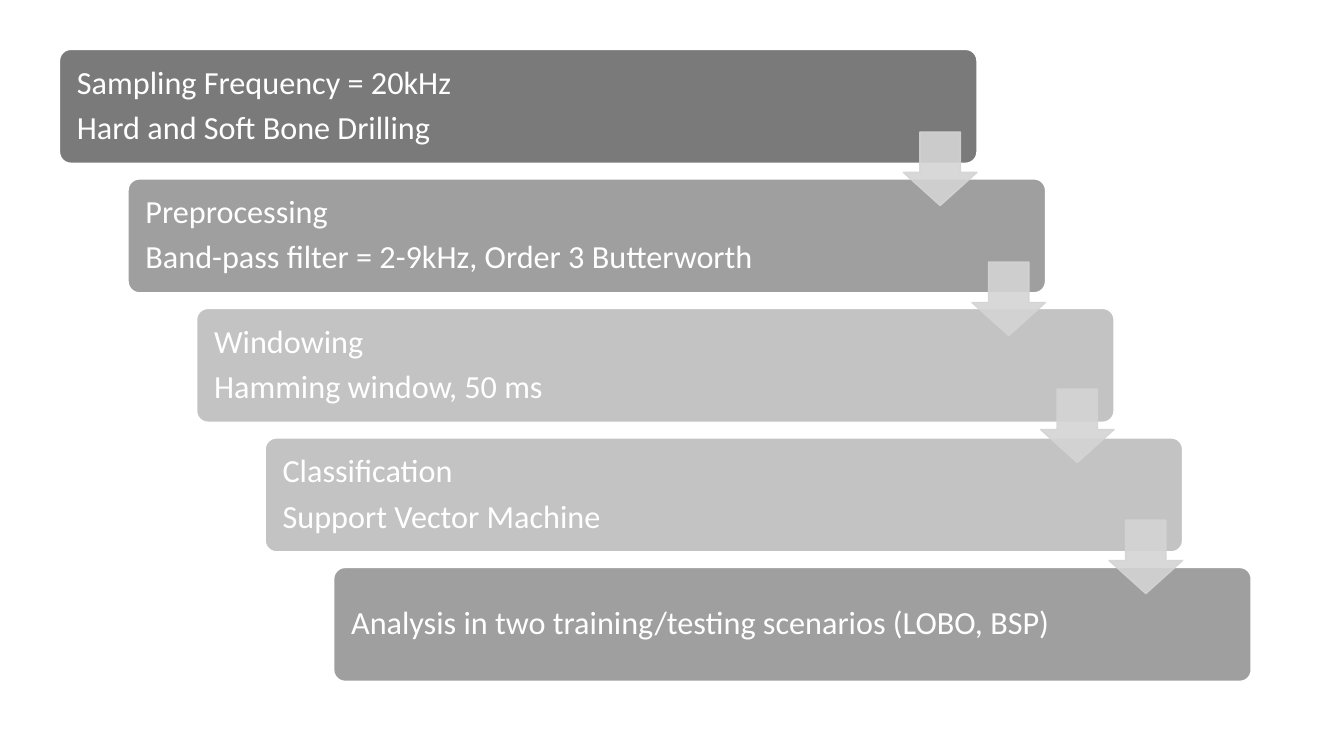
from dataclasses import dataclass
from typing import Optional

from pptx import Presentation
from pptx.dml.color import RGBColor
from pptx.enum.shapes import MSO_AUTO_SHAPE_TYPE as Shape
from pptx.enum.text import MSO_ANCHOR as Anchor, PP_ALIGN as Align
from pptx.oxml.ns import qn
from pptx.util import Inches, Pt
from lxml import etree

WHITE = RGBColor(0xFF, 0xFF, 0xFF)
DARK = RGBColor(0x7A, 0x7A, 0x7A)
MEDIUM = RGBColor(0x9F, 0x9F, 0x9F)
LIGHT = RGBColor(0xC3, 0xC3, 0xC3)
ARROW = RGBColor(0xD4, 0xD4, 0xD4)

# Staircase geometry in inches
LEFT, TOP = 0.59, 0.49
STEP_X, STEP_Y = 0.68, 1.285
BOX_W, BOX_H = 9.1, 1.13
ARROW_SIZE = 0.73
ARROW_DX = BOX_W - ARROW_SIZE

FRAME_FORMAT = {
    "word_wrap": True,
    "vertical_anchor": Anchor.MIDDLE,
    "margin_left": Inches(0.14),
    "margin_right": Inches(0.14),
    "margin_top": Inches(0.1),
    "margin_bottom": Inches(0.1),
}
PARAGRAPH_FORMAT = {
    "alignment": Align.LEFT,
    "line_spacing": 0.9,
    "space_after": Pt(7.6),
}
FONT_FORMAT = {"name": "Calibri", "size": Pt(23)}


@dataclass
class Step:
    lines: list[str]
    fill: RGBColor
    arrow_top: Optional[float] = None


STEPS = [
    Step(["Sampling Frequency = 20kHz", "Hard and Soft Bone Drilling"], DARK, 1.31),
    Step(["Preprocessing", "Band-pass filter = 2-9kHz, Order 3 Butterworth"], MEDIUM, 2.6),
    Step(["Windowing", "Hamming window, 50 ms"], LIGHT, 3.86),
    Step(["Classification", "Support Vector Machine"], LIGHT, 5.16),
    Step(["Analysis in two training/testing scenarios (LOBO, BSP)"], MEDIUM),
]


def apply_format(target: object, values: dict) -> None:
    for name, value in values.items():
        setattr(target, name, value)


def add_block(s, kind: Shape, left: float, top: float, width: float, height: float,
              adjustments: list[float], fill: RGBColor, line: RGBColor):
    sp = s.shapes.add_shape(kind, Inches(left), Inches(top), Inches(width), Inches(height))
    for i, value in enumerate(adjustments):
        sp.adjustments[i] = value
    sp.shadow.inherit = False
    sp.fill.solid()
    sp.fill.fore_color.rgb = fill
    sp.line.color.rgb = line
    sp.line.width = Pt(1)
    return sp


def add_step(s, step: Step, index: int) -> None:
    sp = add_block(s, Shape.ROUNDED_RECTANGLE, LEFT + index * STEP_X, TOP + index * STEP_Y,
                   BOX_W, BOX_H, [0.1], step.fill, WHITE)
    tf = sp.text_frame
    apply_format(tf, FRAME_FORMAT)
    for i, text in enumerate(step.lines):
        p = tf.add_paragraph() if i else tf.paragraphs[0]
        apply_format(p, PARAGRAPH_FORMAT)
        r = p.add_run()
        r.text = text
        apply_format(r.font, FONT_FORMAT)
        r.font.color.rgb = WHITE


def add_arrow(s, top: float, index: int) -> None:
    sp = add_block(s, Shape.DOWN_ARROW, LEFT + index * STEP_X + ARROW_DX, top,
                   ARROW_SIZE, ARROW_SIZE, [0.55, 0.45], ARROW, ARROW)
    # 90 % opacity on fill and outline
    for color in sp.element.spPr.iter(qn("a:srgbClr")):
        etree.SubElement(color, qn("a:alpha"), val="90000")


def main() -> None:
    prs = Presentation()
    prs.slide_width, prs.slide_height = Inches(13.33), Inches(7.5)
    s = prs.slides.add_slide(prs.slide_layouts[6])

    # Process steps
    for index, step in enumerate(STEPS):
        add_step(s, step, index)

    # Arrows lie above all the boxes
    for index, step in enumerate(STEPS):
        if step.arrow_top is not None:
            add_arrow(s, step.arrow_top, index)

    prs.save("out.pptx")


if __name__ == "__main__":
    main()
